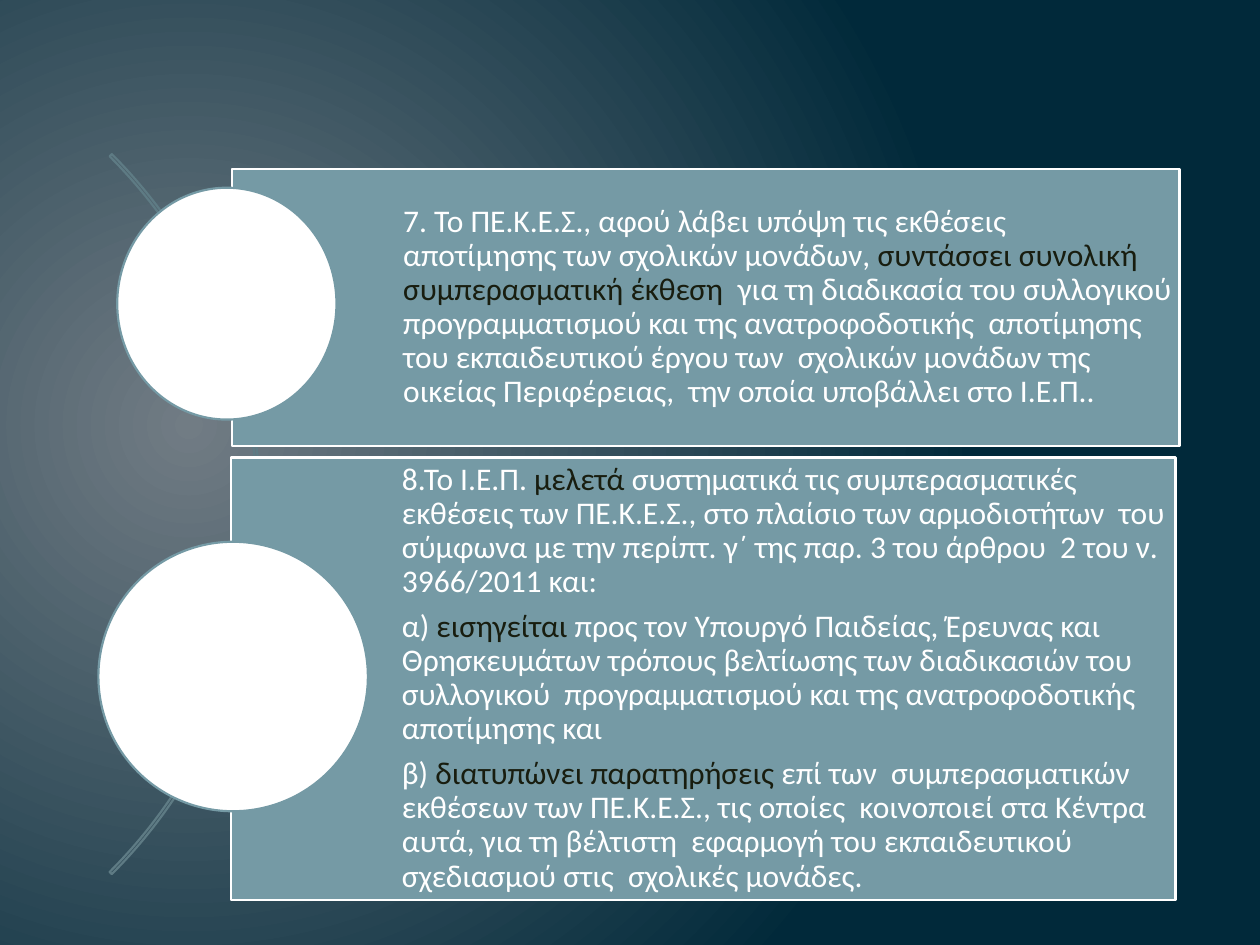
from dataclasses import dataclass

from lxml import etree
from pptx import Presentation
from pptx.dml.color import RGBColor
from pptx.enum.shapes import MSO_SHAPE
from pptx.enum.text import MSO_ANCHOR, PP_ALIGN
from pptx.oxml.ns import qn
from pptx.util import Pt

RECTANGLE, OVAL, ARC = MSO_SHAPE.RECTANGLE, MSO_SHAPE.OVAL, MSO_SHAPE.BLOCK_ARC
MIDDLE, LEFT = MSO_ANCHOR.MIDDLE, PP_ALIGN.LEFT


@dataclass(frozen=True)
class Theme:
    glow: str = "717C84"
    night: str = "01293A"
    panel: str = "759AA5"
    arc: str = "5E7B84"
    white: str = "FFFFFF"
    accent: str = "181D0F"
    font: str = "Calibri"
    size: float = 18
    line: float = 1.25
    margin: float = 3.6
    indent: float = 97.9
    gap: float = 6.3


THEME = Theme()

# Each paragraph is a list of (text, is emphasised)
REPORT = [
    [("7. Το ΠΕ.Κ.Ε.Σ., αφού λάβει υπόψη τις εκθέσεις  αποτίμησης των σχολικών μονάδων, ", False),
     ("συντάσσει συνολική συμπερασματική έκθεση ", True),
     (" για τη διαδικασία του συλλογικού προγραμματισμού και της ανατροφοδοτικής  αποτίμησης "
      "του εκπαιδευτικού έργου των  σχολικών μονάδων της οικείας Περιφέρειας,  την οποία "
      "υποβάλλει στο Ι.Ε.Π..", False)],
]
REVIEW = [
    [("8.Το Ι.Ε.Π. ", False),
     ("μελετά", True),
     (" συστηματικά τις συμπερασματικές  εκθέσεις των ΠΕ.Κ.Ε.Σ., στο πλαίσιο των αρμοδιοτήτων  "
      "του σύμφωνα με την περίπτ. γ΄ της παρ. 3 του άρθρου  2 του ν. 3966/2011 και:", False)],
    [("α) ", False),
     ("εισηγείται ", True),
     ("προς τον Υπουργό Παιδείας, Έρευνας και Θρησκευμάτων τρόπους βελτίωσης των διαδικασιών "
      "του συλλογικού  προγραμματισμού και της ανατροφοδοτικής  αποτίμησης και", False)],
    [("β) ", False),
     ("διατυπώνει παρατηρήσεις ", True),
     ("επί των  συμπερασματικών εκθέσεων των ΠΕ.Κ.Ε.Σ., τις οποίες  κοινοποιεί στα Κέντρα "
      "αυτά, για τη βέλτιστη  εφαρμογή του εκπαιδευτικού σχεδιασμού στις  σχολικές μονάδες.",
      False)],
]


def color(value):
    return RGBColor.from_string(value)


def add_figure(page, kind, box, *, line, fill=None):
    shape = page.shapes.add_shape(kind, *(Pt(length) for length in box))
    shape.shadow.inherit = False
    if fill:
        shape.fill.solid()
        shape.fill.fore_color.rgb = color(fill)
    else:
        shape.fill.background()
    shape.line.color.rgb = color(line)
    shape.line.width = Pt(THEME.line)
    return shape


def write_text(frame, paragraphs, *, size, font, plain, emphasis, gap, spacing=0.9):
    for index, pieces in enumerate(paragraphs):
        para = frame.paragraphs[0] if index == 0 else frame.add_paragraph()
        para.alignment = LEFT
        para.line_spacing = spacing
        para.space_after = Pt(gap)
        for text, emphasised in pieces:
            span = para.add_run()
            span.text = text
            span.font.size = Pt(size)
            span.font.name = font
            span.font.color.rgb = color(emphasis if emphasised else plain)


def paint_background(page):
    """Radial glow centred near the left edge."""
    fill = page.background.fill
    fill.gradient()
    for stop, value in zip(fill.gradient_stops, (THEME.glow, THEME.night)):
        stop.color.rgb = color(value)
    gradient = page._element.find(".//" + qn("a:gradFill"))
    linear = gradient.find(qn("a:lin"))
    radial = etree.Element(qn("a:path"), {"path": "circle"})
    etree.SubElement(radial, qn("a:fillToRect"),
                     {"l": "15000", "t": "50000", "r": "85000", "b": "60000"})
    gradient.replace(linear, radial)


def add_guide_arc(page, box):
    arc = add_figure(page, ARC, box, line=THEME.arc)
    # Quarter turn from 315 to 45 degrees, then relative thickness
    for index, value in enumerate((189, 27, 0.003)):
        arc.adjustments[index] = value


def add_item(page, box, circle_box, paragraphs):
    """Text panel with a circle over its left edge."""
    panel = add_figure(page, RECTANGLE, box, line=THEME.white, fill=THEME.panel)
    frame = panel.text_frame
    frame.word_wrap = True
    frame.vertical_anchor = MIDDLE
    frame.margin_left = Pt(THEME.indent)
    frame.margin_top = frame.margin_right = frame.margin_bottom = Pt(THEME.margin)
    write_text(frame, paragraphs, size=THEME.size, font=THEME.font,
               plain=THEME.white, emphasis=THEME.accent, gap=THEME.gap)
    add_figure(page, OVAL, circle_box, line=THEME.panel, fill=THEME.white)


def main():
    deck = Presentation()
    deck.slide_width, deck.slide_height = Pt(720), Pt(540)
    page = deck.slides.add_slide(deck.slide_layouts[6])
    paint_background(page)
    add_guide_arc(page, (-432.7, 2.9, 581.8, 581.8))
    add_item(page, (132.5, 96.5, 541.5, 158.4), (67, 107.3, 125.3, 132.5), REPORT)
    add_item(page, (131.8, 261.4, 540, 252.7), (56.2, 309.6, 154, 154), REVIEW)
    deck.save("out.pptx")


if __name__ == "__main__":
    main()
